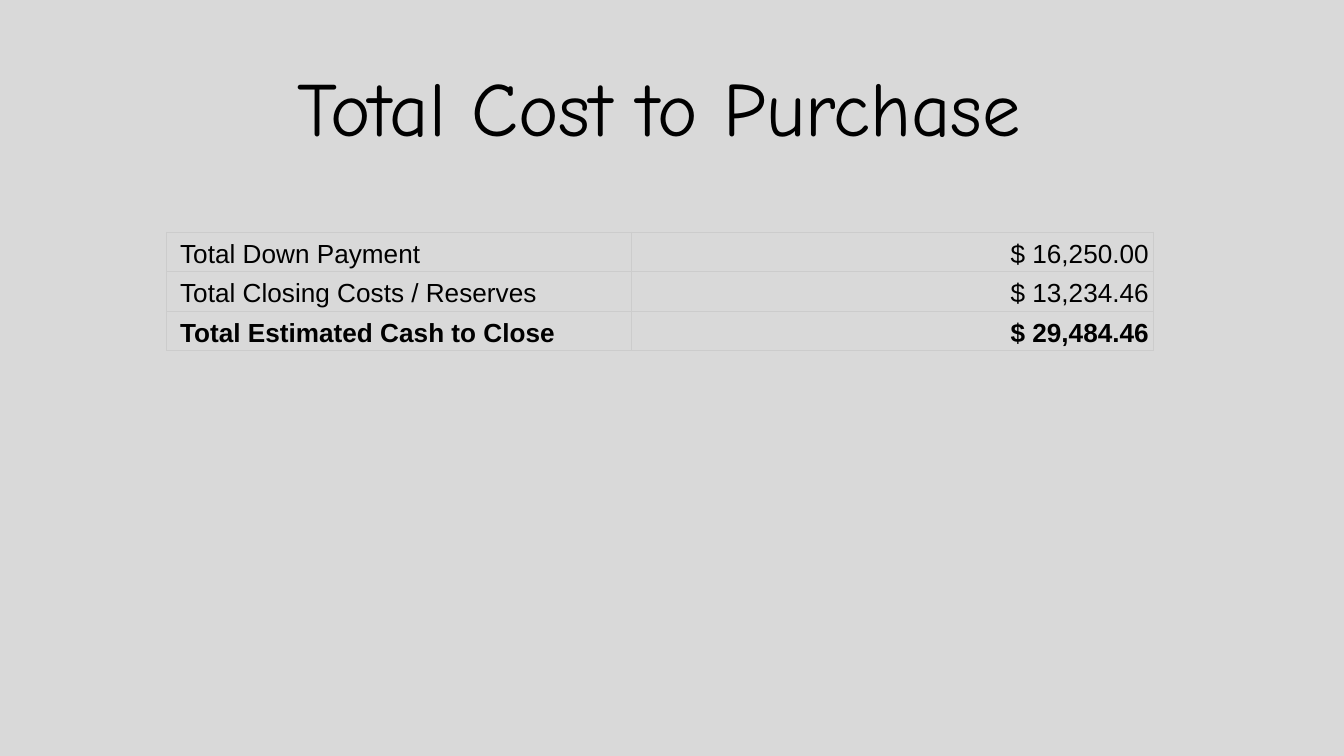
from dataclasses import dataclass

from lxml import etree
from pptx import Presentation
from pptx.dml.color import RGBColor
from pptx.enum.text import MSO_ANCHOR, MSO_AUTO_SIZE, PP_ALIGN
from pptx.oxml.ns import qn
from pptx.slide import Slide
from pptx.table import _Cell
from pptx.text.text import _Paragraph
from pptx.util import Inches, Pt

LEFT, CENTER, RIGHT = PP_ALIGN.LEFT, PP_ALIGN.CENTER, PP_ALIGN.RIGHT
TOP, BOTTOM = MSO_ANCHOR.TOP, MSO_ANCHOR.BOTTOM
NO_AUTOFIT = MSO_AUTO_SIZE.NONE

SLIDE_WIDTH = Inches(10)
SLIDE_HEIGHT = SLIDE_WIDTH * 9 // 16
TITLE_ONLY = 5


@dataclass(frozen=True)
class Theme:
    background: str = "D9D9D9"
    ink: str = "000000"
    border: str = "CCCCCC"
    border_width: float = 0.75
    title_font: str = "Comic Neue"
    title_size: int = 41
    body_font: str = "Arial"
    body_size: int = 14
    line_spacing: float = 1.15


@dataclass(frozen=True)
class Column:
    """A table column: width in inches, side inset in points."""
    width: float
    side_inset: float
    align: PP_ALIGN


@dataclass(frozen=True)
class CostRow:
    label: str
    amount: str
    bold: bool = False


THEME = Theme()
COLUMNS = (Column(3.46, 7.2, LEFT), Column(3.88, 2.25, RIGHT))
ROW_HEIGHT = 0.22
CELL_INSET = Pt(1.5)
COSTS = (
    CostRow("Total Down Payment", "$ 16,250.00"),
    CostRow("Total Closing Costs / Reserves", "$ 13,234.46"),
    CostRow("Total Estimated Cash to Close", "$ 29,484.46", bold=True),
)


def add_span(para: _Paragraph, text: str, font: str, size: int, bold: bool = False) -> None:
    span = para.add_run()
    span.text = text
    span.font.name = font
    span.font.size = Pt(size)
    span.font.bold = bold
    span.font.color.rgb = RGBColor.from_string(THEME.ink)


def add_title(page: Slide, text: str) -> None:
    title = page.shapes.title
    title.left, title.top = Inches(0.97), Inches(0.35)
    title.width, title.height = Inches(7.87), Inches(1.14)
    frame = title.text_frame
    frame.word_wrap = True
    frame.auto_size = NO_AUTOFIT
    frame.vertical_anchor = TOP
    frame.margin_left = frame.margin_right = Inches(0.1)
    frame.margin_top = frame.margin_bottom = Inches(0.1)
    para = frame.paragraphs[0]
    para.alignment = CENTER
    para.line_spacing = 1.0
    para.space_before = Pt(0)
    add_span(para, text, THEME.title_font, THEME.title_size)


def set_borders(cell: _Cell) -> None:
    properties = cell._tc.get_or_add_tcPr()
    for index, side in enumerate(("lnL", "lnR", "lnT", "lnB")):
        line = etree.Element(qn(f"a:{side}"), w=str(Pt(THEME.border_width)))
        fill = etree.SubElement(line, qn("a:solidFill"))
        etree.SubElement(fill, qn("a:srgbClr"), val=THEME.border)
        properties.insert(index, line)


def fill_cell(cell: _Cell, text: str, column: Column, bold: bool) -> None:
    cell.fill.background()
    set_borders(cell)
    cell.vertical_anchor = BOTTOM
    cell.margin_left = cell.margin_right = Pt(column.side_inset)
    cell.margin_top = cell.margin_bottom = CELL_INSET
    para = cell.text_frame.paragraphs[0]
    para.alignment = column.align
    para.line_spacing = THEME.line_spacing
    add_span(para, text, THEME.body_font, THEME.body_size, bold)


def add_cost_table(page: Slide) -> None:
    width = Inches(sum(column.width for column in COLUMNS))
    height = Inches(ROW_HEIGHT * len(COSTS))
    table = page.shapes.add_table(
        len(COSTS), len(COLUMNS), Inches(1.24), Inches(1.73), width, height,
    ).table
    table.first_row = table.horz_banding = False
    for index, column in enumerate(COLUMNS):
        table.columns[index].width = Inches(column.width)
    for row, cost in enumerate(COSTS):
        table.rows[row].height = Inches(ROW_HEIGHT)
        for index, text in enumerate((cost.label, cost.amount)):
            fill_cell(table.cell(row, index), text, COLUMNS[index], cost.bold)


def main() -> None:
    deck = Presentation()
    deck.slide_width, deck.slide_height = SLIDE_WIDTH, SLIDE_HEIGHT
    page = deck.slides.add_slide(deck.slide_layouts[TITLE_ONLY])
    background = page.background.fill
    background.solid()
    background.fore_color.rgb = RGBColor.from_string(THEME.background)
    add_title(page, "Total Cost to Purchase")
    add_cost_table(page)
    deck.save("out.pptx")


if __name__ == "__main__":
    main()
